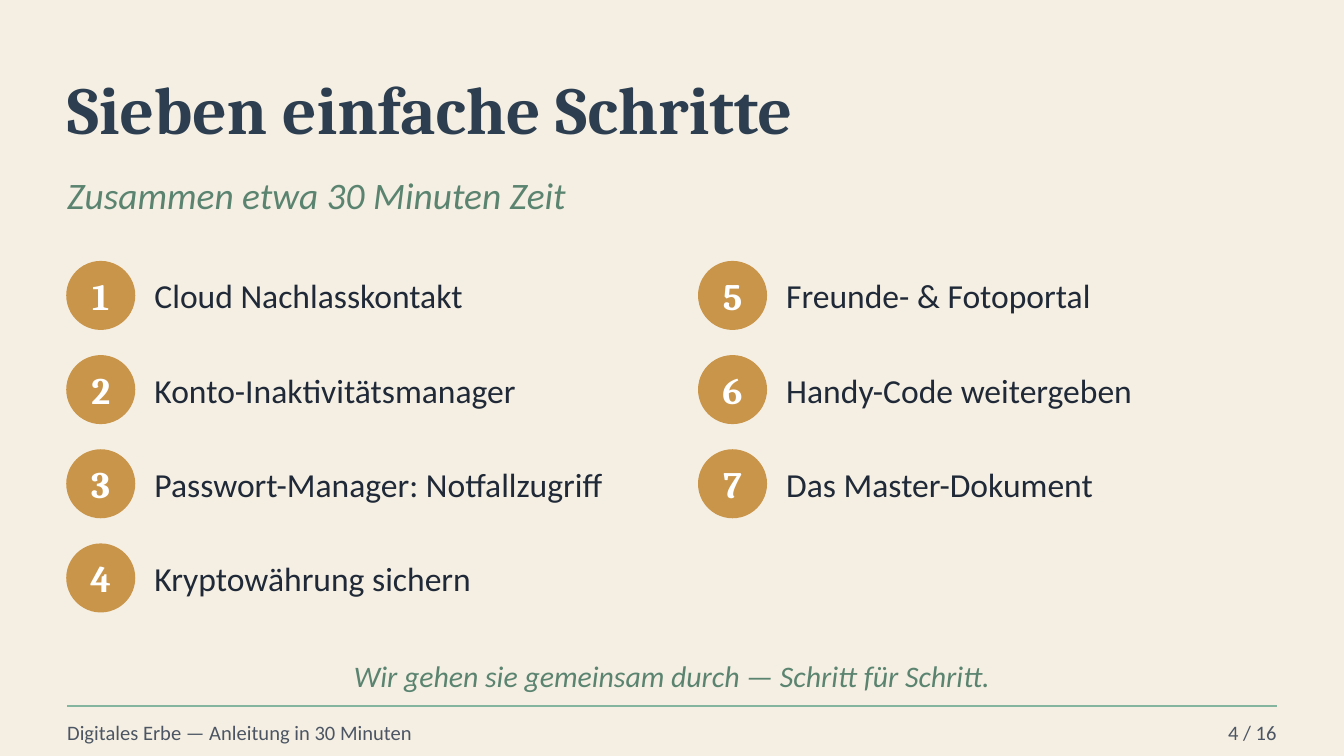
from dataclasses import dataclass

from lxml import etree
from pptx import Presentation
from pptx import util as u
from pptx.dml import color
from pptx.enum import shapes, text
from pptx.oxml import ns


@dataclass(frozen=True)
class Theme:
    background: str = "F5EFE3"
    navy: str = "2C3E50"
    green: str = "5B8470"
    rule: str = "84B59F"
    gold: str = "C9954A"
    white: str = "FFFFFF"
    ink: str = "1F2937"
    grey: str = "4B5563"
    heading_font: str = "Cambria"
    body_font: str = "Calibri"
    title_size: int = 36
    subtitle_size: int = 20
    number_size: int = 20
    step_size: int = 18
    closing_size: int = 16
    footer_size: int = 11


theme = Theme()


def rgb(value):
    return color.RGBColor.from_string(value)


def write(holder, content, *, size, ink, font=theme.body_font, bold=False,
          italic=False, align=text.PP_ALIGN.LEFT):
    frame = holder.text_frame
    frame.margin_left = frame.margin_top = frame.margin_right = frame.margin_bottom = 0
    frame.word_wrap = True
    frame.auto_size = text.MSO_AUTO_SIZE.NONE
    frame.vertical_anchor = text.MSO_ANCHOR.MIDDLE
    paragraph = frame.paragraphs[0]
    paragraph.alignment = align
    run = paragraph.add_run()
    run.text = content
    run.font.name = font
    run.font.size = u.Pt(size)
    run.font.bold = bold
    run.font.italic = italic
    run.font.color.rgb = rgb(ink)


deck = Presentation()
deck.slide_width = u.Cm(25.4)
deck.slide_height = u.Cm(14.29)
slide = deck.slides.add_slide(deck.slide_layouts[5])
slide.background.fill.solid()
slide.background.fill.fore_color.rgb = rgb(theme.background)

margin = u.Cm(1.27)
content_width = u.Cm(22.86)

title = slide.shapes.title
title.left, title.top = margin, u.Cm(0.89)
title.width, title.height = content_width, u.Cm(2.29)
write(title, "Sieben einfache Schritte", size=theme.title_size, ink=theme.navy,
      font=theme.heading_font, bold=True)

subtitle = slide.shapes.add_textbox(margin, u.Cm(3.05), content_width, u.Cm(1.27))
write(subtitle, "Zusammen etwa 30 Minuten Zeit", size=theme.subtitle_size,
      ink=theme.green, italic=True)

steps = [
    "Cloud Nachlasskontakt",
    "Konto-Inaktivitätsmanager",
    "Passwort-Manager: Notfallzugriff",
    "Kryptowährung sichern",
    "Freunde- & Fotoportal",
    "Handy-Code weitergeben",
    "Das Master-Dokument",
]
rows = 4
diameter = u.Cm(1.27)

for index, step in enumerate(steps):
    column, row = divmod(index, rows)
    left = margin + column * u.Cm(11.94)
    top = u.Cm(4.95) + row * u.Cm(1.78)

    badge = slide.shapes.add_shape(shapes.MSO_SHAPE.OVAL, left, top, diameter, diameter)
    badge.shadow.inherit = False
    badge.fill.solid()
    badge.fill.fore_color.rgb = rgb(theme.gold)
    badge.line.color.rgb = rgb(theme.gold)
    badge.line.width = u.Pt(1)
    write(badge, str(index + 1), size=theme.number_size, ink=theme.white,
          font=theme.heading_font, bold=True, align=text.PP_ALIGN.CENTER)

    label = slide.shapes.add_textbox(left + u.Cm(1.65), top, u.Cm(9.27), diameter)
    write(label, step, size=theme.step_size, ink=theme.ink)

closing = slide.shapes.add_textbox(margin, u.Cm(12.32), content_width, u.Cm(0.89))
write(closing, "Wir gehen sie gemeinsam durch — Schritt für Schritt.",
      size=theme.closing_size, ink=theme.green, italic=True,
      align=text.PP_ALIGN.CENTER)

footer_rule = slide.shapes.add_connector(
    shapes.MSO_CONNECTOR.STRAIGHT, margin, u.Cm(13.34),
    margin + content_width, u.Cm(13.34))
footer_rule.line.color.rgb = rgb(theme.rule)
footer_rule.line.width = u.Pt(1)
etree.SubElement(footer_rule._element.spPr, ns.qn("a:effectLst"))

footer_top, footer_height = u.Cm(13.46), u.Cm(0.76)
footer = slide.shapes.add_textbox(margin, footer_top, u.Cm(16.51), footer_height)
write(footer, "Digitales Erbe — Anleitung in 30 Minuten",
      size=theme.footer_size, ink=theme.grey)

page_number = slide.shapes.add_textbox(u.Cm(17.78), footer_top, u.Cm(6.35), footer_height)
write(page_number, "4 / 16", size=theme.footer_size, ink=theme.grey,
      align=text.PP_ALIGN.RIGHT)

deck.save("out.pptx")
